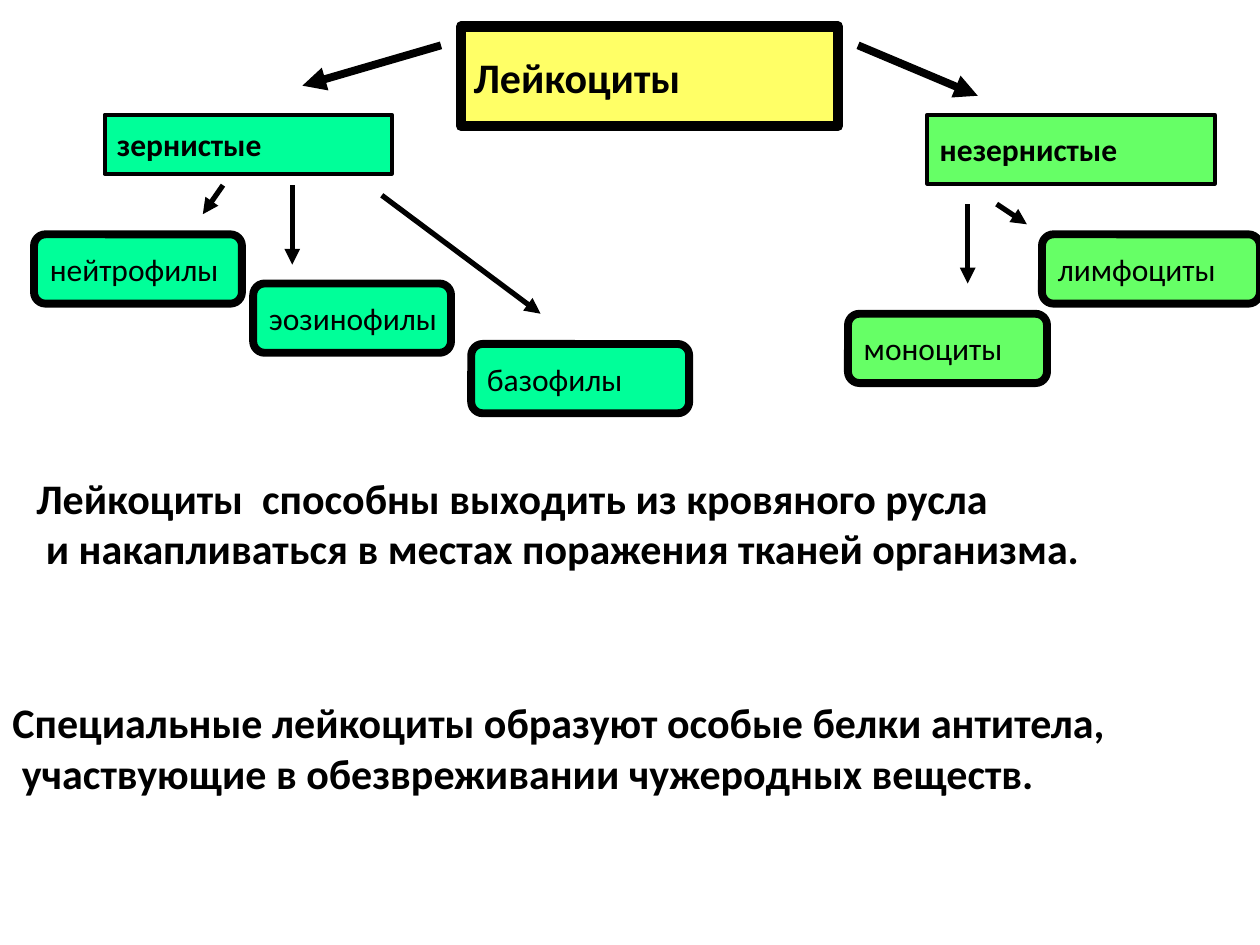
from pptx import Presentation
from pptx.dml.color import RGBColor
from pptx.enum.shapes import MSO_CONNECTOR as Connector, MSO_SHAPE as Shape
from pptx.enum.text import MSO_ANCHOR as Anchor, MSO_AUTO_SIZE as AutoSize, PP_ALIGN as Align
from pptx.oxml.ns import qn
from pptx.util import Inches, Pt
from lxml.etree import SubElement

BLACK = RGBColor(0x00, 0x00, 0x00)
YELLOW = RGBColor(0xFF, 0xFF, 0x66)
MINT = RGBColor(0x00, 0xFF, 0x99)
GREEN = RGBColor(0x66, 0xFF, 0x66)

TITLE_FONT = {"name": "Calibri", "size": Pt(24), "bold": True}
GROUP_FONT = {"name": "Calibri", "size": Pt(18), "bold": True}
CELL_FONT = {"name": "Calibri", "size": Pt(18), "bold": False}


def write(frame, lines, font_format):
    """Fill a text frame with unwrapped, left-aligned lines."""
    frame.word_wrap = False
    frame.text = "\n".join(lines)
    for paragraph in frame.paragraphs:
        paragraph.alignment = Align.LEFT
        for run in paragraph.runs:
            run.font.color.rgb = BLACK
            for key, value in font_format.items():
                setattr(run.font, key, value)


def add_node(slide, box, label, fill, border, font_format, outline=Shape.RECTANGLE):
    """Draw one labelled box of the scheme."""
    node = slide.shapes.add_shape(outline, *map(Inches, box))
    node.shadow.inherit = False
    node.fill.solid()
    node.fill.fore_color.rgb = fill
    node.line.color.rgb = BLACK
    node.line.width = Pt(border)
    node.text_frame.vertical_anchor = Anchor.MIDDLE
    write(node.text_frame, [label], font_format)


def add_arrow(slide, origin, ends, width):
    """Draw an arrow whose ends are offsets from the origin."""
    left, top = origin
    x1, y1, x2, y2 = ends
    arrow = slide.shapes.add_connector(
        Connector.STRAIGHT,
        Inches(left + x1), Inches(top + y1), Inches(left + x2), Inches(top + y2))
    arrow.line.color.rgb = BLACK
    arrow.line.width = Pt(width)
    SubElement(arrow.line._get_or_add_ln(), qn("a:tailEnd"), type="triangle")
    SubElement(arrow._element.spPr, qn("a:effectLst"))


def add_root(slide, box, label, arrows):
    """Place the top box and the arrows leading from it."""
    add_node(slide, box, label, YELLOW, 6, TITLE_FONT)
    for ends in arrows:
        add_arrow(slide, box[:2], ends, 4.5)


def add_branch(slide, origin, fill, group, cells, arrows):
    """Place a group box, its cell types and arrows relative to the origin."""
    left, top = origin
    label, x, width, height = group
    add_node(slide, (left + x, top, width, height), label, fill, 2.25, GROUP_FONT)
    for label, x, y, width in cells:
        add_node(slide, (left + x, top + y, width, 0.55), label, fill, 4.5,
                 CELL_FONT, Shape.ROUNDED_RECTANGLE)
    for ends in arrows:
        add_arrow(slide, origin, ends, 3)


def add_statement(slide, box, lines):
    """Place a bold statement of several lines."""
    statement = slide.shapes.add_textbox(*map(Inches, box))
    write(statement.text_frame, lines, TITLE_FONT)
    statement.text_frame.auto_size = AutoSize.SHAPE_TO_FIT_TEXT


def main():
    """Build the slide about leukocytes."""
    deck = Presentation()
    deck.slide_width, deck.slide_height = Inches(10), Inches(7.5)
    slide = deck.slides.add_slide(deck.slide_layouts[6])

    add_root(slide, (3.66, 0.21, 2.99, 0.79), "Лейкоциты",
             [(-0.16, 0.15, -1.26, 0.47), (3.15, 0.15, 4.1, 0.55)])
    add_branch(
        slide, (0.27, 0.91), MINT, ("зернистые", 0.56, 2.28, 0.47),
        [("нейтрофилы", 0, 0.95, 1.65),
         ("эозинофилы", 1.74, 1.34, 1.57),
         ("базофилы", 3.47, 1.82, 1.73)],
        [(1.5, 0.56, 1.34, 0.79),
         (2.05, 0.56, 2.05, 1.19),
         (2.76, 0.64, 4.02, 1.58)])
    add_branch(
        slide, (6.73, 0.91), GREEN, ("незернистые", 0.63, 2.28, 0.55),
        [("моноциты", 0, 1.58, 1.58),
         ("лимфоциты", 1.54, 0.95, 1.73)],
        [(0.95, 0.71, 0.95, 1.34),
         (1.18, 0.71, 1.42, 0.87)])
    add_statement(slide, (0.19, 3.7, 9.65, 0.9), [
        "Лейкоциты  способны выходить из кровяного русла",
        " и накапливаться в местах поражения тканей организма."])
    add_statement(slide, (0, 5.48, 10.24, 0.9), [
        "Специальные лейкоциты образуют особые белки антитела,",
        " участвующие в обезвреживании чужеродных веществ."])
    deck.save("out.pptx")


if __name__ == "__main__":
    main()
